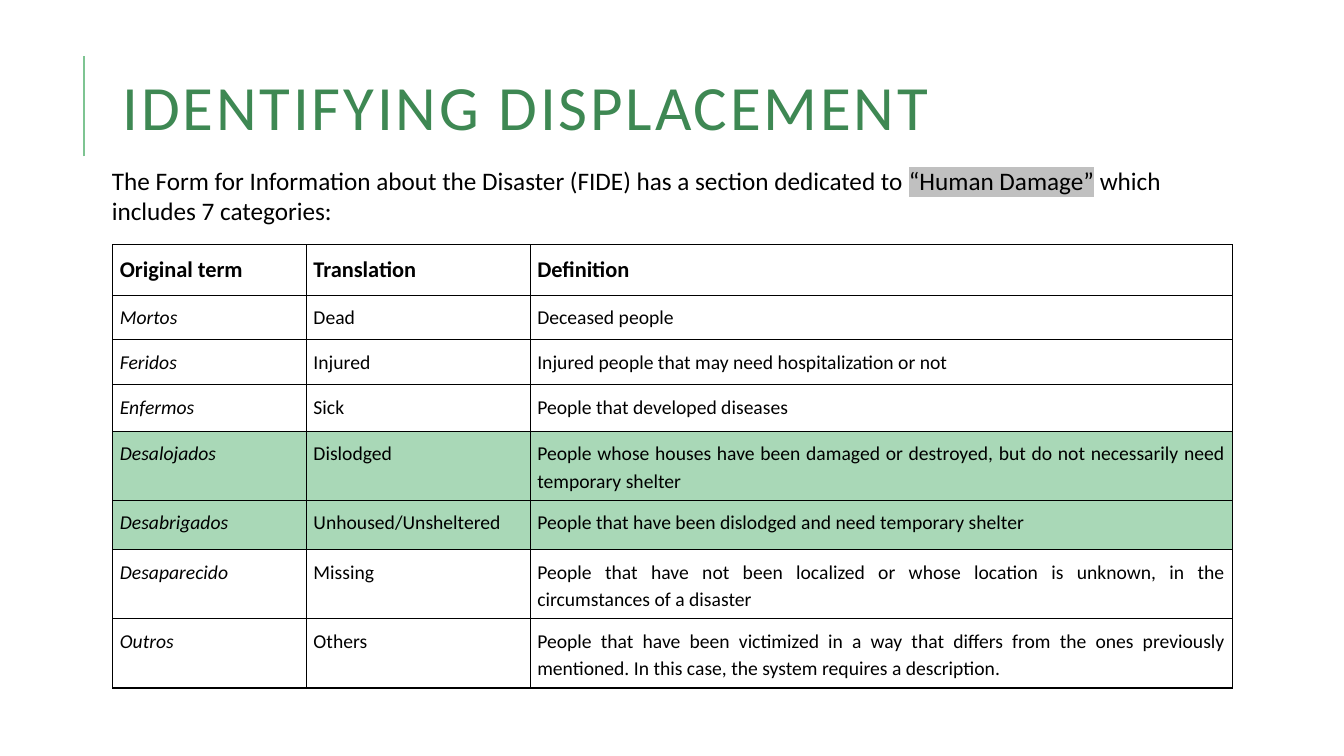
import pptx
import pptx.dml.color
import pptx.enum.shapes
import pptx.enum.text
import pptx.oxml
import pptx.oxml.ns
import pptx.util
from pptx.util import Cm, Pt

ALIGN = pptx.enum.text.PP_ALIGN
ANCHOR = pptx.enum.text.MSO_ANCHOR

TITLE = "IDENTIFYING DISPLACEMENT"
INTRO = [
    ("The Form for Information about the Disaster (FIDE) has a section dedicated to ", None),
    ("“Human Damage”", "C0C0C0"),
    (" which includes 7 categories:", None),
]
HEADINGS = ("Original term", "Translation", "Definition")
# term, translation, definition, row height in cm
CATEGORIES = [
    ("Mortos", "Dead", "Deceased people", 1.12),
    ("Feridos", "Injured", "Injured people that may need hospitalization or not", 1.14),
    ("Enfermos", "Sick", "People that developed diseases", 1.17),
    ("Desalojados", "Dislodged", "People whose houses have been damaged or destroyed, "
     "but do not necessarily need temporary shelter", 1.65),
    ("Desabrigados", "Unhoused/Unsheltered",
     "People that have been dislodged and need temporary shelter", 1.24),
    ("Desaparecido", "Missing", "People that have not been localized or whose location "
     "is unknown, in the circumstances of a disaster", 1.68),
    ("Outros", "Others", "People that have been victimized in a way that differs from the "
     "ones previously mentioned. In this case, the system requires a description.", 1.52),
]
DISPLACED = {"Desalojados", "Desabrigados"}
COLUMN_WIDTHS = (4.88, 5.64, 17.7)
HEADING_HEIGHT = 1.27
BLACK, GREEN, ACCENT, PALE_GREEN = "000000", "3E8853", "7EC492", "A9D8B7"


def rgb(code):
    return pptx.dml.color.RGBColor.from_string(code)


def xml(markup):
    return pptx.oxml.parse_xml(
        markup.replace(" ", f" {pptx.oxml.ns.nsdecls('a')} ", 1))


def set_all(target, values):
    for name, value in values.items():
        setattr(target, name, value)


def add_run(paragraph, text, size, color=BLACK, highlight=None, **style):
    run = paragraph.add_run()
    run.text = text
    run.font.color.rgb = rgb(color)
    if highlight:
        fill = run.font._element.find(pptx.oxml.ns.qn("a:solidFill"))
        fill.addnext(xml(f'<a:highlight ><a:srgbClr val="{highlight}"/></a:highlight>'))
    set_all(run.font, {"name": "Calibri", "size": Pt(size), **style})
    return run


def add_title(slide):
    title = slide.shapes.title
    set_all(title, {"left": Cm(2.84), "top": Cm(0.74), "width": Cm(27), "height": Cm(4.17)})
    set_all(title.text_frame, {"vertical_anchor": ANCHOR.MIDDLE, "word_wrap": True,
                               "auto_size": pptx.enum.text.MSO_AUTO_SIZE.NONE})
    paragraph = title.text_frame.paragraphs[0]
    set_all(paragraph, {"alignment": ALIGN.LEFT, "line_spacing": 0.8})
    run = add_run(paragraph, TITLE, 45, GREEN)
    run.font._element.set("spc", "200")


def add_title_rule(slide):
    rule = slide.shapes.add_connector(
        pptx.enum.shapes.MSO_CONNECTOR.STRAIGHT, Cm(2.12), Cm(3.94), Cm(2.12), Cm(1.4))
    rule.line.color.rgb = rgb(ACCENT)
    rule.line.width = Pt(1.5)
    rule._element.spPr.append(xml("<a:effectLst />"))


def add_intro(slide):
    intro = slide.shapes.add_textbox(Cm(2.57), Cm(4.04), Cm(28.47), Cm(1.8)).text_frame
    intro.word_wrap = True
    for text, highlight in INTRO:
        add_run(intro.paragraphs[0], text, 18, highlight=highlight)


def fill_cell(cell, text, fill, alignment, size, **style):
    margins = ("margin_left", "margin_right", "margin_top", "margin_bottom")
    set_all(cell, dict.fromkeys(margins, Cm(0.18)))
    properties = cell._tc.get_or_add_tcPr()
    for side in "LRTB":
        properties.append(xml(
            f'<a:ln{side} w="12700"><a:solidFill><a:srgbClr val="{BLACK}"/>'
            f'</a:solidFill></a:ln{side}>'))
    if fill:
        cell.fill.solid()
        cell.fill.fore_color.rgb = rgb(fill)
    else:
        cell.fill.background()
    paragraph = cell.text_frame.paragraphs[0]
    set_all(paragraph, {"alignment": alignment, "line_spacing": 1.15})
    add_run(paragraph, text, size, **style)


def add_categories(slide):
    heights = [HEADING_HEIGHT] + [category[-1] for category in CATEGORIES]
    table = slide.shapes.add_table(
        len(heights), len(COLUMN_WIDTHS), Cm(2.84), Cm(6.17),
        Cm(sum(COLUMN_WIDTHS)), Cm(sum(heights))).table
    set_all(table, {"first_row": False, "horz_banding": False})
    for column, width in zip(table.columns, COLUMN_WIDTHS):
        column.width = Cm(width)
    for row, height in zip(table.rows, heights):
        row.height = Cm(height)
    for c, heading in enumerate(HEADINGS):
        fill_cell(table.cell(0, c), heading, None, ALIGN.LEFT, 16, bold=True)
    for r, (*texts, _) in enumerate(CATEGORIES, start=1):
        fill = PALE_GREEN if texts[0] in DISPLACED else None
        for c, text in enumerate(texts):
            fill_cell(table.cell(r, c), text, fill, ALIGN.JUSTIFY, 14, italic=c == 0)


def main():
    deck = pptx.Presentation()
    set_all(deck, {"slide_width": Cm(33.87), "slide_height": Cm(19.05)})
    slide = deck.slides.add_slide(deck.slide_layouts.get_by_name("Title Only"))
    add_title_rule(slide)
    add_title(slide)
    add_categories(slide)
    add_intro(slide)
    deck.save("out.pptx")


if __name__ == "__main__":
    main()
